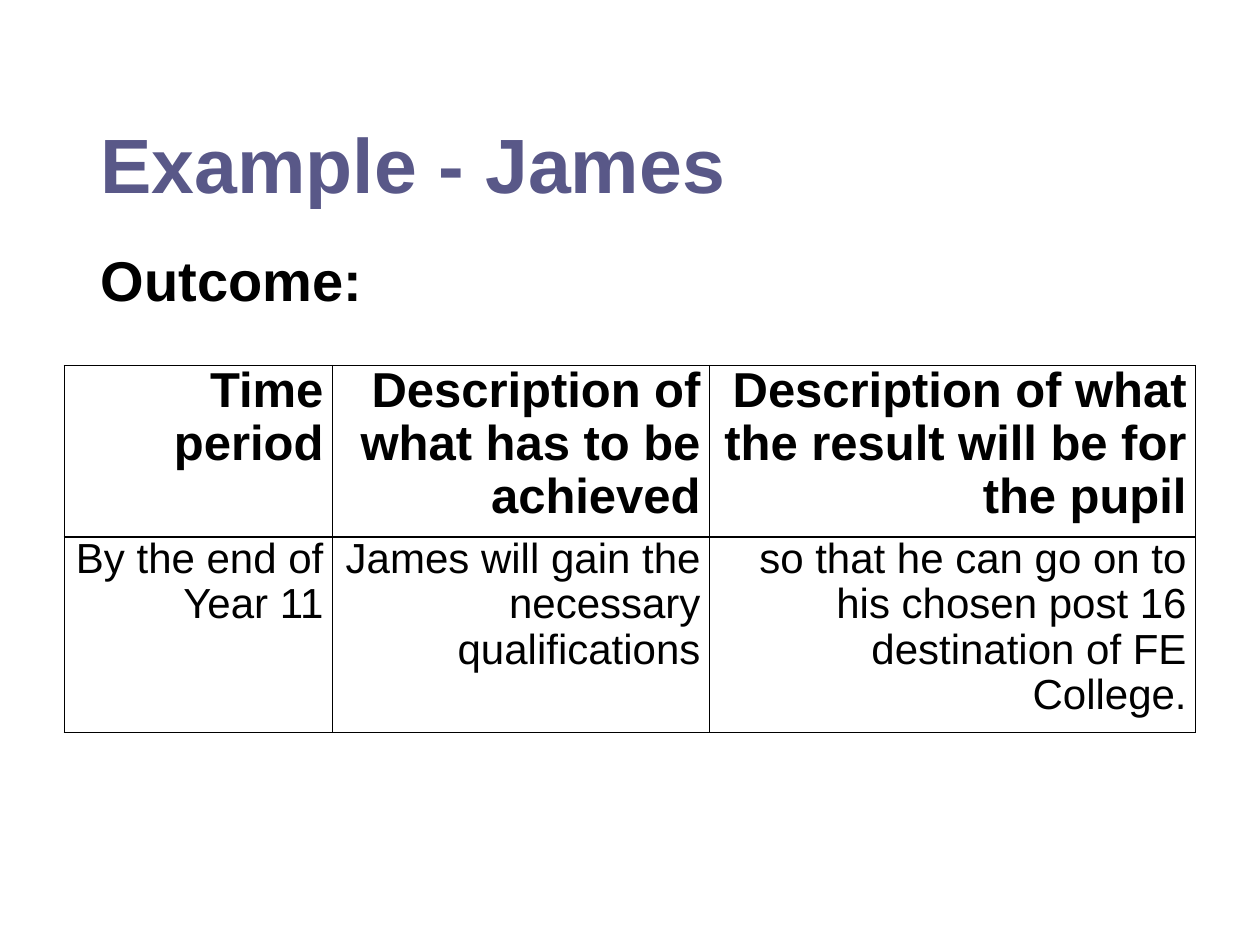
from typing import NamedTuple

from lxml.etree import SubElement
from pptx import Presentation
from pptx.dml.color import RGBColor
from pptx.enum.text import MSO_ANCHOR, PP_ALIGN
from pptx.oxml.ns import qn
from pptx.util import Cm, Pt

BLACK = RGBColor(0, 0, 0)
PURPLE = RGBColor(0x59, 0x58, 0x88)


class Label(NamedTuple):
    text: str
    box: tuple
    size: int
    color: RGBColor
    anchor: MSO_ANCHOR


class Row(NamedTuple):
    height: float
    size: int
    bold: bool
    texts: tuple


LABELS = (
    Label("Example - James", (1.9, 1.07, 17.2, 4.44), 44, PURPLE, MSO_ANCHOR.MIDDLE),
    Label("Outcome:", (1.9, 4.82, 21.6, 14.23), 32, BLACK, MSO_ANCHOR.TOP),
)
WIDTHS = (5.4, 7.6, 9.8)
ROWS = (
    Row(3.3, 28, True, (
        "Time period",
        "Description of what has to be achieved",
        "Description of what the result will be for the pupil",
    )),
    Row(3.84, 24, False, (
        "By the end of Year 11",
        "James will gain the necessary qualifications",
        "so that he can go on to his chosen post 16 destination of FE College.",
    )),
)


def write(frame, text: str, *, size: int, color=BLACK, bold=True,
          align=PP_ALIGN.LEFT, line=1.0) -> None:
    frame.word_wrap = True
    para = frame.paragraphs[0]
    para.alignment = align
    para.line_spacing = line
    run = para.add_run()
    run.text = text
    font = run.font
    font.name, font.size, font.bold = "Arial", Pt(size), bold
    font.color.rgb = color


def add_label(slide, label: Label) -> None:
    frame = slide.shapes.add_textbox(*map(Cm, label.box)).text_frame
    frame.margin_left = frame.margin_right = Cm(0.13)
    frame.margin_top = frame.margin_bottom = Cm(0.13)
    frame.vertical_anchor = label.anchor
    write(frame, label.text, size=label.size, color=label.color)


def add_edges(cell) -> None:
    props = cell._tc.get_or_add_tcPr()
    for side in ("lnL", "lnR", "lnT", "lnB"):
        edge = SubElement(props, qn(f"a:{side}"), w=str(Pt(1)))
        fill = SubElement(edge, qn("a:solidFill"))
        SubElement(fill, qn("a:srgbClr"), val=str(BLACK))


def add_grid(slide) -> None:
    table = slide.shapes.add_table(
        len(ROWS), len(WIDTHS), Cm(1.3), Cm(7.37),
        Cm(sum(WIDTHS)), Cm(sum(row.height for row in ROWS)),
    ).table
    table.first_row = table.horz_banding = False
    for col, width in zip(table.columns, WIDTHS):
        col.width = Cm(width)
    for line, row in zip(table.rows, ROWS):
        line.height = Cm(row.height)
        for cell, text in zip(line.cells, row.texts):
            cell.margin_left = cell.margin_right = Cm(0.18)
            cell.margin_top = cell.margin_bottom = 0
            add_edges(cell)
            cell.fill.background()
            write(cell.text_frame, text, size=row.size, bold=row.bold,
                  align=PP_ALIGN.RIGHT, line=0.97)


def main() -> None:
    deck = Presentation()
    deck.slide_width, deck.slide_height = Cm(25.4), Cm(19.05)
    slide = deck.slides.add_slide(deck.slide_layouts[6])
    for label in LABELS:
        add_label(slide, label)
    add_grid(slide)
    deck.save("out.pptx")


if __name__ == "__main__":
    main()
